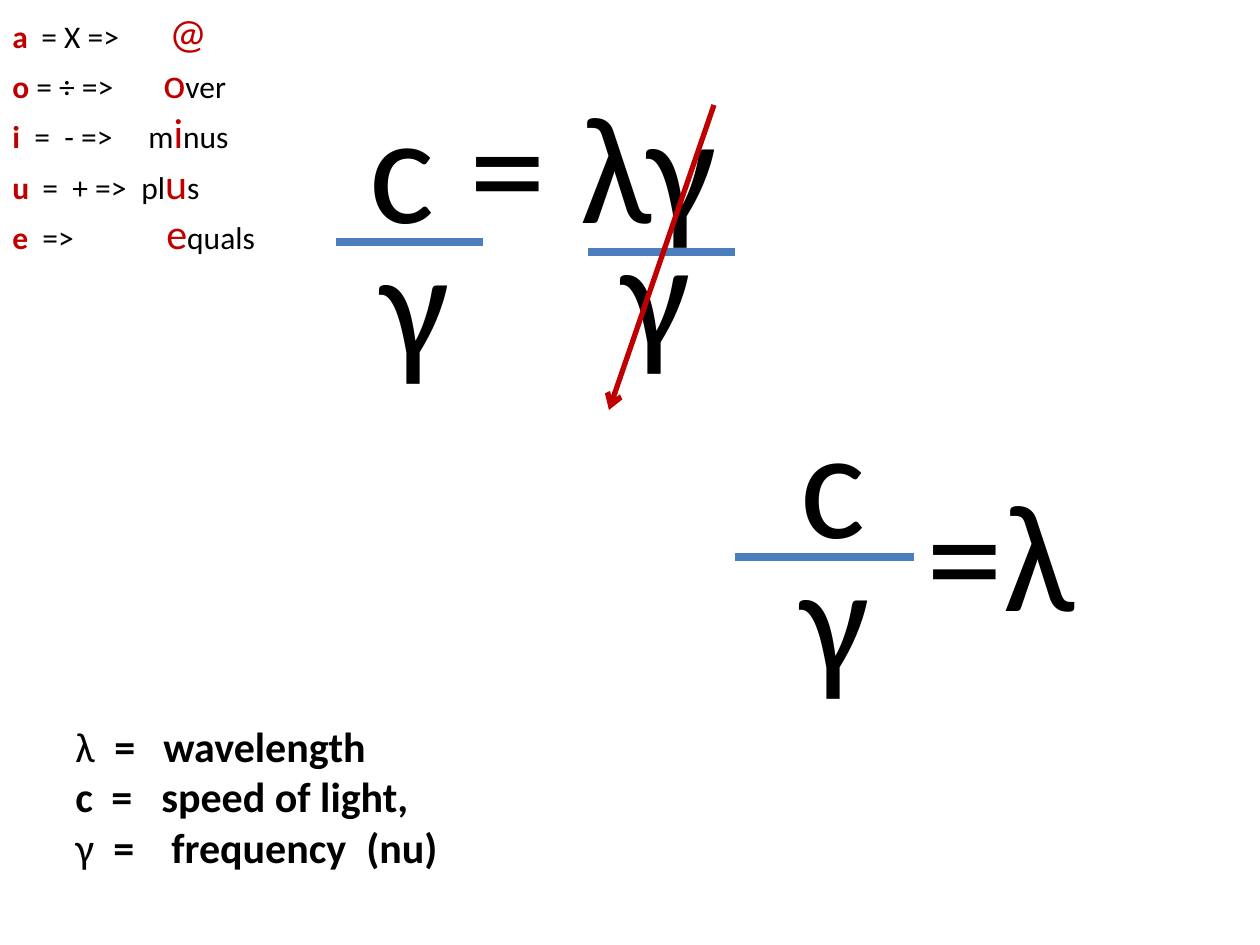
from dataclasses import dataclass

from lxml.etree import SubElement
from pptx import Presentation
from pptx.dml.color import RGBColor as Color
from pptx.enum.shapes import MSO_CONNECTOR as Connector
from pptx.enum.text import MSO_AUTO_SIZE as AutoSize
from pptx.oxml.ns import qn
from pptx.util import Pt

EMU_PER_PX = 914400 / 126


@dataclass(frozen=True)
class Theme:
    font: str = "Calibri"
    black: str = "000000"
    red: str = "C00000"
    blue: str = "4B7EBC"
    formula_size: int = 88
    accent_size: int = 24
    note_size: int = 18
    bar_width: float = 4.5
    strike_width: float = 3


THEME = Theme()


def px(value):
    return round(value * EMU_PER_PX)


def set_attributes(target, values):
    for name, value in values.items():
        setattr(target, name, value)


def text_format(size, color=THEME.black, bold=False):
    return {"name": THEME.font, "size": Pt(size), "bold": bold, "color": color}


FORMULA = text_format(THEME.formula_size)
VOWEL = text_format(THEME.note_size, THEME.red, True)
NOTE = text_format(THEME.note_size)
ACCENT = text_format(THEME.accent_size, THEME.red)
SYMBOL = text_format(THEME.accent_size)
MEANING = text_format(THEME.accent_size, bold=True)


def add_run(paragraph, text, style):
    run = paragraph.add_run()
    run.text = text
    values = dict(style)
    run.font.color.rgb = Color.from_string(values.pop("color"))
    set_attributes(run.font, values)


def add_tab_stops(paragraph, stops):
    tab_list = SubElement(paragraph._p.get_or_add_pPr(), qn("a:tabLst"))
    for stop in stops:
        SubElement(tab_list, qn("a:tab"), pos=str(px(stop)), algn="l")


def add_text(shapes, box, lines):
    shape = shapes.add_textbox(*map(px, box))
    frame = shape.text_frame
    set_attributes(frame, {"word_wrap": True, "auto_size": AutoSize.SHAPE_TO_FIT_TEXT})
    for index, (stops, runs) in enumerate(lines):
        paragraph = frame.add_paragraph() if index else frame.paragraphs[0]
        if stops:
            add_tab_stops(paragraph, stops)
        for text, style in runs:
            add_run(paragraph, text, style)


def add_formula(shapes, box, text):
    add_text(shapes, box, [((), [(text, FORMULA)])])


def add_line(shapes, start, end, color, width, arrow=False):
    line = shapes.add_connector(Connector.STRAIGHT, *map(px, start + end))
    line.line.color.rgb = Color.from_string(color)
    line.line.width = Pt(width)
    if arrow:
        SubElement(line.line._get_or_add_ln(), qn("a:tailEnd"), type="arrow")
    SubElement(line._element.spPr, qn("a:effectLst"))


def add_fraction_bar(shapes, left, top, width):
    add_line(shapes, (left, top), (left + width, top), THEME.blue, THEME.bar_width)


def add_equation(slide, left, top):
    shapes = slide.shapes
    add_formula(shapes, (left + 21, top, 724, 200), "c = λγ")
    add_formula(shapes, (left + 273, top + 126, 105, 199), "γ")
    add_formula(shapes, (left + 32, top + 136, 220, 199), "γ")
    add_fraction_bar(shapes, left + 252, top + 189, 147)
    add_fraction_bar(shapes, left, top + 179, 147)
    add_line(shapes, (left + 378, top + 42), (left + 273, top + 347),
             THEME.red, THEME.strike_width, arrow=True)


def add_solution(slide, left, top):
    add_formula(slide.shapes, (left + 179, top + 73, 242, 199), "=λ")
    fraction = slide.shapes.add_group_shape().shapes
    add_formula(fraction, (left + 53, top, 557, 199), "c")
    add_formula(fraction, (left + 53, top + 136, 284, 198), "γ")
    add_fraction_bar(fraction, left, top + 179, 179)


def add_vowel_key(slide, left, top):
    rows = [
        ((29, 157), "a", "\t= X =>\t", "@", ""),
        ((151,), "o", " = ÷ =>\t", "o", "ver"),
        ((22, 52, 136), "i", "\t=\t- =>\tm", "i", "nus"),
        ((30, 60, 129), "u", "\t=\t+ =>\tpl", "u", "s"),
        ((30, 154), "e", "\t=>\t", "e", "quals"),
    ]
    lines = [
        (stops, [(text, style) for text, style in
                 zip(texts, (VOWEL, NOTE, ACCENT, NOTE)) if text])
        for stops, *texts in rows
    ]
    add_text(slide.shapes, (left, top, 945, 267), lines)


def add_legend(slide, left, top):
    lines = [
        ((39, 88), [("λ", SYMBOL), ("\t=\twavelength", MEANING)]),
        ((36, 86), [("c\t=\tspeed of light,", MEANING)]),
        ((38, 96, 291), [("γ", SYMBOL), ("\t=\tfrequency\t(nu)", MEANING)]),
    ]
    add_text(slide.shapes, (left, top, 892, 171), lines)


def main():
    presentation = Presentation()
    set_attributes(presentation, {"slide_width": px(1260), "slide_height": px(945)})
    slide = presentation.slides.add_slide(presentation.slide_layouts[6])
    add_equation(slide, 336, 63)
    add_solution(slide, 735, 378)
    add_vowel_key(slide, 0, 0)
    add_legend(slide, 63, 714)
    presentation.save("out.pptx")


if __name__ == "__main__":
    main()
